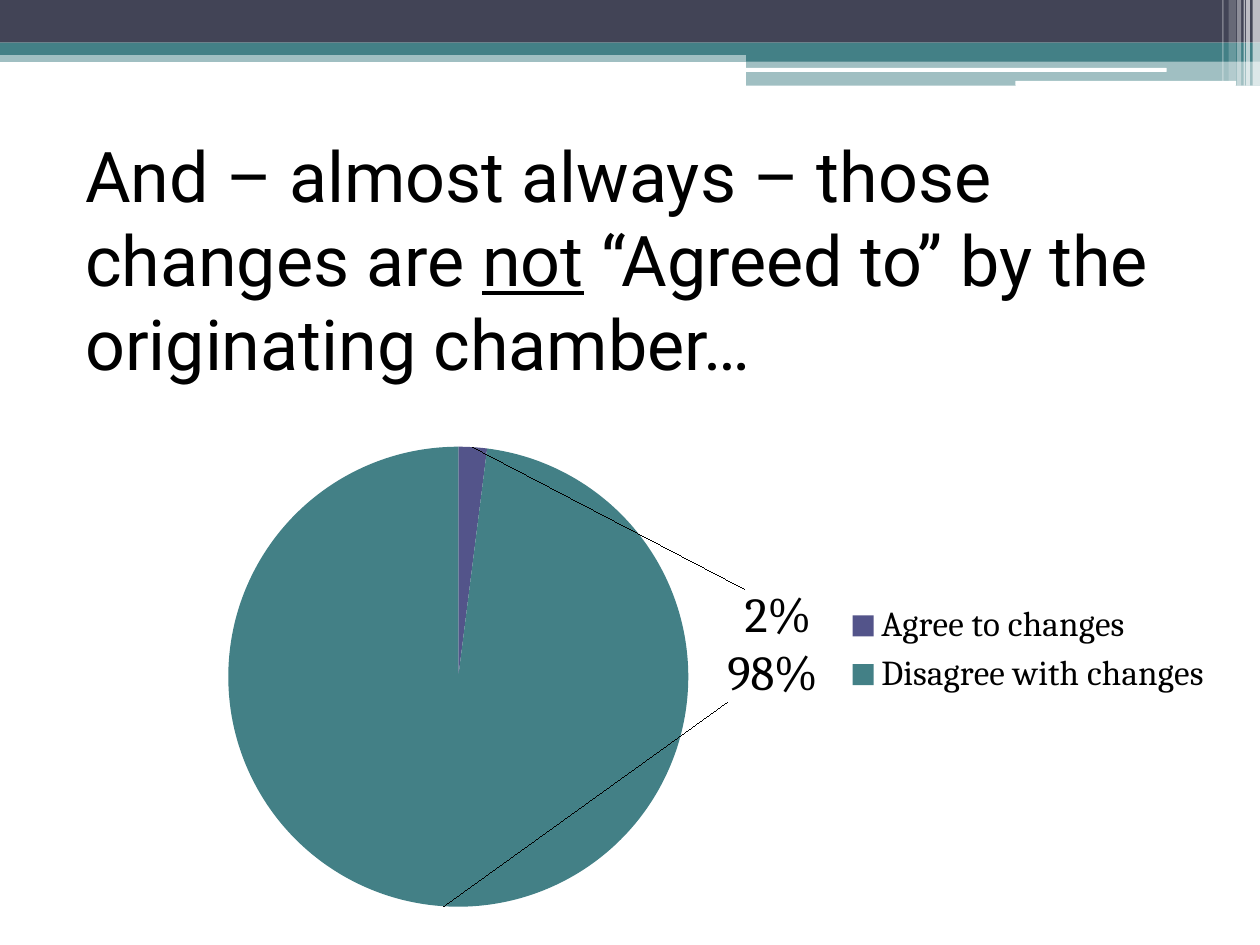
from typing import NamedTuple

from lxml import etree
from pptx import Presentation
from pptx.chart.data import CategoryChartData
from pptx.dml.color import RGBColor
from pptx.enum.chart import XL_CHART_TYPE, XL_LABEL_POSITION, XL_LEGEND_POSITION
from pptx.enum.shapes import MSO_SHAPE
from pptx.oxml import parse_xml
from pptx.oxml.ns import qn
from pptx.util import Cm, Pt

RECT = MSO_SHAPE.RECTANGLE
ROUNDED = MSO_SHAPE.ROUNDED_RECTANGLE
PIE = XL_CHART_TYPE.PIE
OUTSIDE = XL_LABEL_POSITION.OUTSIDE_END
RIGHT = XL_LEGEND_POSITION.RIGHT

BLACK, WHITE, NAVY, TEAL, PURPLE = "000000", "FFFFFF", "424456", "438086", "53548A"
CHART_NS = "http://schemas.openxmlformats.org/drawingml/2006/chart"


class Band(NamedTuple):
    left: float
    top: float
    width: float
    height: float
    color: str
    opacity: int = 100
    shape: MSO_SHAPE = RECT


class Slice(NamedTuple):
    name: str
    value: int
    color: str
    label_dx: float
    label_dy: float


BANDS = [
    Band(0, 1.02, 25.4, 0.23, TEAL, 50),
    Band(0, 0, 25.4, 0.86, NAVY),
    Band(0, 0.86, 25.4, 0.25, TEAL),
    Band(15.04, 0.99, 10.36, 0.25, TEAL),
    Band(15.04, 1.22, 10.36, 0.51, TEAL, 50),
    Band(15.01, 1.37, 8.51, 0.08, WHITE, shape=ROUNDED),
    Band(20.47, 1.63, 4.45, 0.1, WHITE, shape=ROUNDED),
    Band(25.25, 0, 0.15, 1.73, WHITE, 65),
    Band(25.12, 0, 0.08, 1.73, WHITE, 65),
    Band(25.07, 0, 0.03, 1.73, WHITE, 60),
    Band(24.94, 0, 0.08, 1.73, WHITE, 40),
    Band(24.77, 0, 0.15, 1.63, WHITE, 20),
    Band(24.64, 0, 0.03, 1.63, WHITE, 30),
]
SLICES = [
    Slice("Agree to changes", 2, PURPLE, 0.25, 0.33),
    Slice("Disagree with changes", 98, TEAL, 0.27, -0.43),
]
TITLE = [
    ("And – almost always – those changes are ", False),
    ("not", True),
    (" “Agreed to” by the originating chamber…", False),
]


def rgb(color: str) -> RGBColor:
    return RGBColor.from_string(color)


def draw_band(slide, band: Band) -> None:
    sp = slide.shapes.add_shape(
        band.shape, Cm(band.left), Cm(band.top), Cm(band.width), Cm(band.height))
    sp.shadow.inherit = False
    sp.line.fill.background()
    sp.fill.solid()
    sp.fill.fore_color.rgb = rgb(band.color)
    if band.opacity < 100:
        clr = sp._element.spPr.find(".//" + qn("a:srgbClr"))
        etree.SubElement(clr, qn("a:alpha"), val=str(band.opacity * 1000))


def manual_layout(**values):
    """Build a c:layout element from child names and values, in schema order."""
    children = "".join(f'<c:{k} val="{v}"/>' for k, v in values.items())
    return parse_xml(f'<c:layout xmlns:c="{CHART_NS}"><c:manualLayout>'
                     f'{children}</c:manualLayout></c:layout>')


def set_layout(parent, layout, after: str) -> None:
    """Replace the layout of a chart part, placing it after the named child."""
    for old in parent.findall(qn("c:layout")):
        parent.remove(old)
    parent.find(qn(after)).addnext(layout)


def draw_title(slide) -> None:
    box = slide.shapes.add_textbox(Cm(1.47), Cm(2.54), Cm(23.93), Cm(5.38))
    tf = box.text_frame
    tf.word_wrap = True
    p = tf.paragraphs[0]
    for text, underlined in TITLE:
        r = p.add_run()
        r.text = text
        r.font.name = "Roboto"
        r.font.size = Pt(40)
        r.font.color.rgb = rgb(BLACK)
        r.font.underline = underlined


def format_slice(series, index: int, item: Slice) -> None:
    point = series.points[index]
    point.format.fill.solid()
    point.format.fill.fore_color.rgb = rgb(item.color)
    label = point.data_label
    label.font.size = Pt(28)
    label.position = OUTSIDE
    d_lbl = series._element.findall(".//" + qn("c:dLbl"))[index]
    d_lbl.find(qn("c:showVal")).set("val", "0")
    d_lbl.find(qn("c:showPercent")).set("val", "1")
    set_layout(d_lbl, manual_layout(x=item.label_dx, y=item.label_dy), "c:idx")


def draw_pie(slide) -> None:
    data = CategoryChartData()
    data.categories = [s.name for s in SLICES]
    data.add_series("Series 1", [s.value for s in SLICES])
    chart = slide.shapes.add_chart(
        PIE, Cm(0.84), Cm(7.42), Cm(24.56), Cm(12.5), data).chart
    chart.has_title = False
    chart.font.name = "Cambria"
    chart.font.size = Pt(18)
    chart.font.color.rgb = rgb(BLACK)

    chart.has_legend = True
    legend = chart.legend
    legend.position = RIGHT
    legend.include_in_layout = False
    legend.font.size = Pt(20)
    set_layout(legend._element, manual_layout(
        xMode="edge", yMode="edge", x=0.65, y=0.37, w=0.32, h=0.17), "c:legendPos")

    plot = chart.plots[0]
    plot.vary_by_categories = True
    plot_area = plot._element.getparent()
    for old in plot_area.findall(qn("c:layout")):
        plot_area.remove(old)
    plot_area.insert(0, manual_layout(
        layoutTarget="inner", xMode="edge", yMode="edge",
        x=0.153, y=0.127, w=0.378, h=0.742))

    series = plot.series[0]
    labels = series.data_labels
    labels.show_value = False
    labels.show_percentage = True
    labels.font.size = Pt(28)
    for index, item in enumerate(SLICES):
        format_slice(series, index, item)


def main() -> None:
    prs = Presentation()
    prs.slide_width, prs.slide_height = Cm(25.4), Cm(19.05)
    slide = prs.slides.add_slide(prs.slide_layouts[6])
    for band in BANDS:
        draw_band(slide, band)
    draw_pie(slide)
    draw_title(slide)
    prs.save("out.pptx")


if __name__ == "__main__":
    main()
